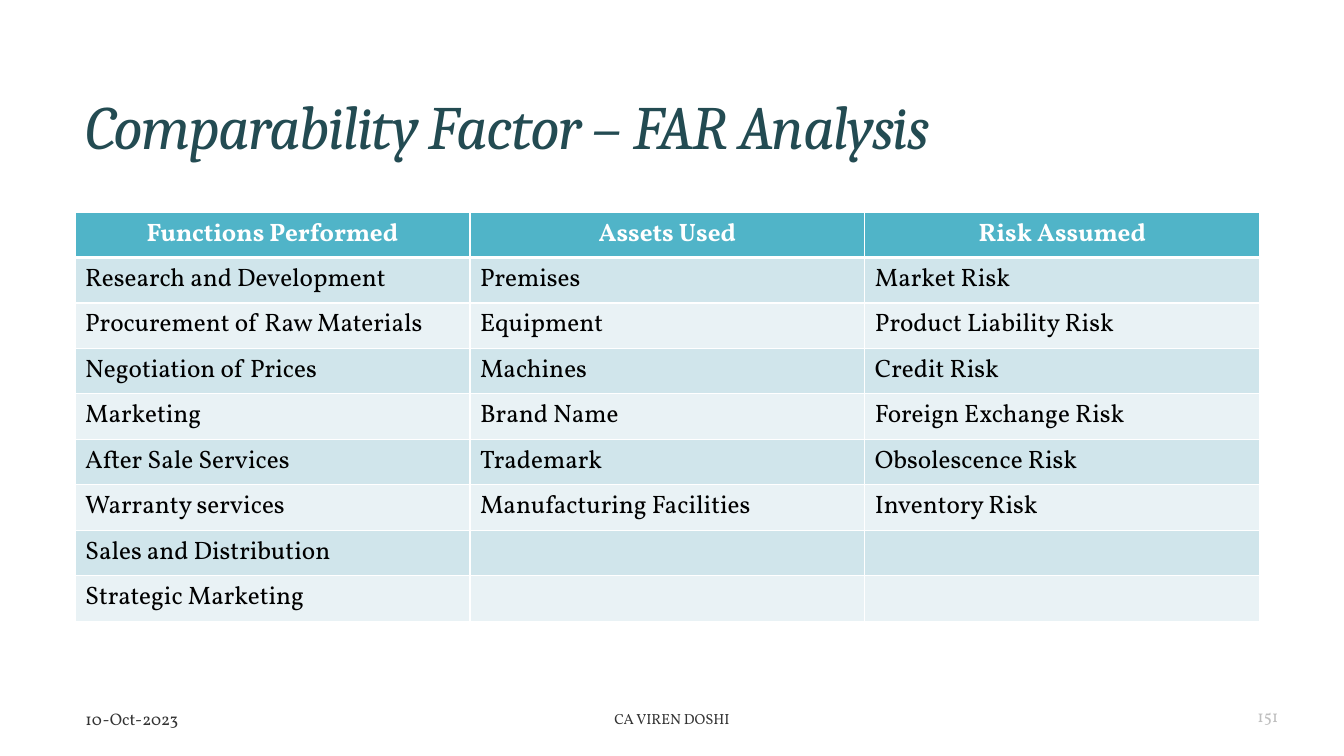
from itertools import zip_longest

from lxml import etree
from pptx import Presentation
from pptx.dml.color import RGBColor
from pptx.enum.text import MSO_ANCHOR, PP_ALIGN
from pptx.oxml.ns import qn
from pptx.util import Pt

LEFT, CENTER, RIGHT = PP_ALIGN.LEFT, PP_ALIGN.CENTER, PP_ALIGN.RIGHT
MIDDLE, BOTTOM = MSO_ANCHOR.MIDDLE, MSO_ANCHOR.BOTTOM
TITLE_ONLY = 5
BODY_FONT, TITLE_FONT = "Vollkorn", "Cambria"
HEADER_FILL, BAND_FILLS = "50B4C8", ("D0E5EB", "E9F2F5")
WHITE, BLACK, FOOTER_GREY, NUMBER_GREY = "FFFFFF", "000000", "333333", "BFBFBF"
COLUMN_WIDTH, ROW_HEIGHT = 282.1, 32.5

FACTORS = {
    "Functions Performed": [
        "Research and Development", "Procurement of Raw Materials",
        "Negotiation of Prices", "Marketing", "After Sale Services",
        "Warranty services", "Sales and Distribution", "Strategic Marketing",
    ],
    "Assets Used": [
        "Premises", "Equipment", "Machines", "Brand Name", "Trademark",
        "Manufacturing Facilities",
    ],
    "Risk Assumed": [
        "Market Risk", "Product Liability Risk", "Credit Risk",
        "Foreign Exchange Risk", "Obsolescence Risk", "Inventory Risk",
    ],
}


def rgb(color):
    """Turn a hex string into a colour."""
    return RGBColor.from_string(color)


def write_text(frame, text, size=18, color=BLACK, font=BODY_FONT, bold=False,
               italic=False, align=LEFT, line_spacing=None, tracking=None):
    """Write one formatted paragraph into a text frame."""
    paragraph = frame.paragraphs[0]
    paragraph.alignment = align
    if line_spacing:
        paragraph.line_spacing = line_spacing
    run = paragraph.add_run()
    run.text = text
    run.font.name = font
    run.font.size = Pt(size)
    run.font.bold = bold
    run.font.italic = italic
    run.font.color.rgb = rgb(color)
    if tracking:
        run.font._element.set("spc", str(round(tracking * 100)))


def place(shape, left, top, width, height):
    """Set the position and size of a shape in points."""
    shape.left, shape.top = Pt(left), Pt(top)
    shape.width, shape.height = Pt(width), Pt(height)


def add_title(slide, text):
    """Move and fill the title placeholder."""
    title = slide.shapes.title
    place(title, 54, 28, 846, 130)
    title.text_frame.word_wrap = True
    title.text_frame.vertical_anchor = MIDDLE
    write_text(title.text_frame, text, size=44, color="234B52", font=TITLE_FONT,
               italic=True, line_spacing=0.85, tracking=-1.2)


def add_footer(slide, text, left, width, anchor=MIDDLE, **text_format):
    """Add one text box of the footer line."""
    footer = slide.shapes.add_textbox(Pt(left), Pt(504.7), Pt(width), Pt(17.7))
    footer.text_frame.word_wrap = True
    footer.text_frame.vertical_anchor = anchor
    write_text(footer.text_frame, text, **text_format)


def set_borders(cell, **widths):
    """Give a cell white borders, with widths in points keyed by side tag."""
    properties = cell._tc.get_or_add_tcPr()
    for position, (side, width) in enumerate(widths.items()):
        line = etree.Element(qn(f"a:{side}"), w=str(Pt(width)))
        fill = etree.SubElement(line, qn("a:solidFill"))
        etree.SubElement(fill, qn("a:srgbClr"), val=WHITE)
        properties.insert(position, line)


def add_factor_table(slide, factors):
    """Add the table with one column per factor."""
    rows = [tuple(factors), *zip_longest(*factors.values(), fillvalue="")]
    frame = slide.shapes.add_table(
        len(rows), len(factors), Pt(53.6), Pt(151.4),
        Pt(COLUMN_WIDTH * len(factors)), Pt(ROW_HEIGHT * len(rows)))
    table = frame.table
    for column in table.columns:
        column.width = Pt(COLUMN_WIDTH)
    for row_index, entries in enumerate(rows):
        is_header = row_index == 0
        table.rows[row_index].height = Pt(ROW_HEIGHT)
        for column_index, entry in enumerate(entries):
            cell = table.cell(row_index, column_index)
            cell.fill.solid()
            cell.fill.fore_color.rgb = rgb(
                HEADER_FILL if is_header else BAND_FILLS[(row_index - 1) % 2])
            set_borders(cell, lnL=1, lnR=1, lnT=3 if row_index == 1 else 1,
                        lnB=3 if is_header else 1)
            if entry:
                write_text(cell.text_frame, entry, bold=is_header,
                           color=WHITE if is_header else BLACK,
                           align=CENTER if is_header else LEFT)


def main():
    """Build and save the slide."""
    deck = Presentation()
    deck.slide_width, deck.slide_height = Pt(960), Pt(540)
    slide = deck.slides.add_slide(deck.slide_layouts[TITLE_ONLY])
    add_title(slide, "Comparability Factor – FAR Analysis")
    add_factor_table(slide, FACTORS)
    add_footer(slide, "10-Oct-2023", 54, 324, size=12, color=FOOTER_GREY)
    add_footer(slide, "CA VIREN DOSHI", 282, 396, size=10.5, color=FOOTER_GREY,
               align=CENTER)
    add_footer(slide, "151", 698.4, 221.8, anchor=BOTTOM, size=12,
               color=NUMBER_GREY, align=RIGHT)
    deck.save("out.pptx")


if __name__ == "__main__":
    main()
